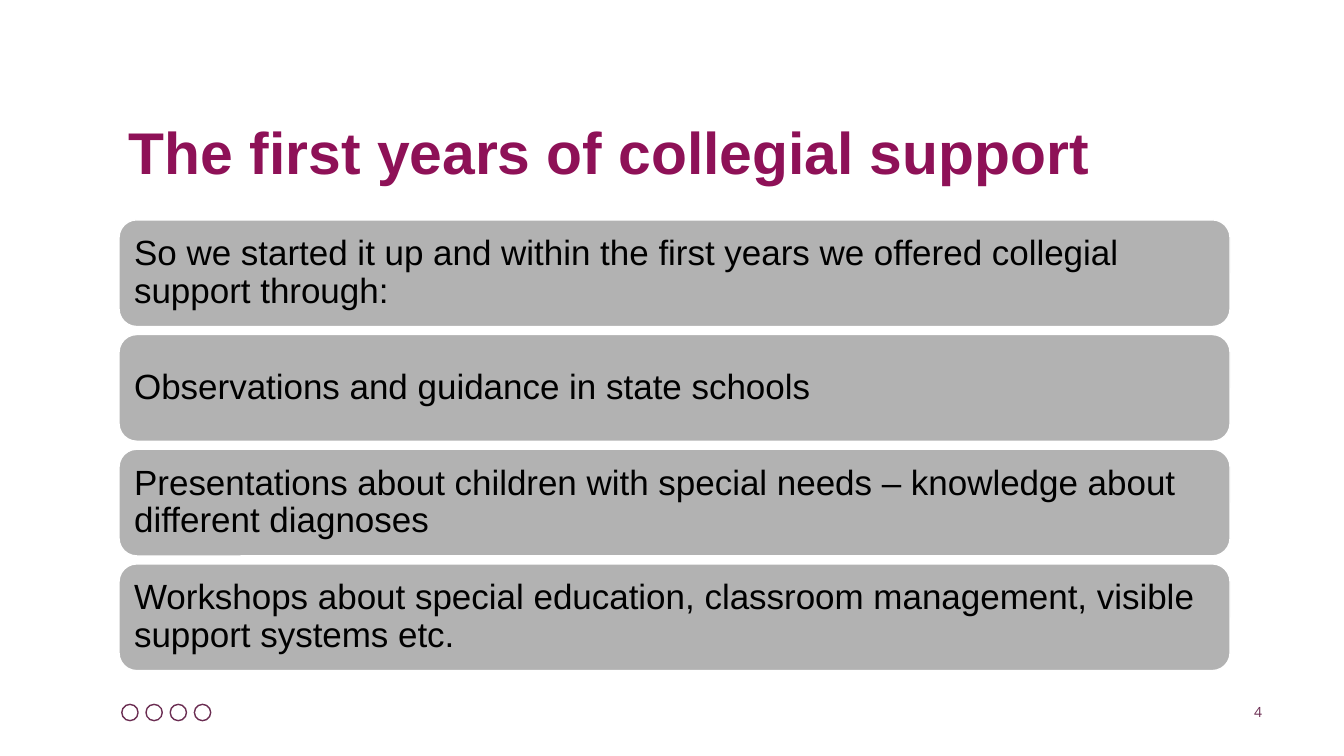
from dataclasses import dataclass

from pptx import Presentation
from pptx.dml.color import RGBColor
from pptx.enum.shapes import MSO_SHAPE as Shape
from pptx.enum.text import MSO_ANCHOR as Anchor, MSO_AUTO_SIZE as AutoSize, PP_ALIGN as Align
from pptx.util import Cm, Pt

COLORS = {
    "title": "8E1157",
    "accent": "6B2D52",
    "card": "B2B2B2",
    "text": "000000",
    "white": "FFFFFF",
}
LEFT, WIDTH = 3.0, 28.0
CARD_TOP, CARD_HEIGHT, CARD_PITCH = 5.54, 2.69, 2.89
DOT_LEFT, DOT_TOP, DOT_SIZE, DOT_PITCH, DOT_COUNT = 3.07, 17.75, 0.41, 0.61, 4

CARD_TEXTS = [
    "So we started it up and within the first years we offered collegial support through:",
    "Observations and guidance in state schools",
    "Presentations about children with special needs – knowledge about different diagnoses",
    "Workshops about special education, classroom management, visible support systems etc.",
]


@dataclass
class TextStyle:
    size: float
    color: str
    font: str = "Arial"
    bold: bool = False
    align: Align = Align.LEFT
    anchor: Anchor = Anchor.MIDDLE
    spacing: float = 0.9
    inset_y: float = 0.13


TITLE = TextStyle(42, "title", bold=True)
CARD = TextStyle(25, "text", inset_y=0.25)
NUMBER = TextStyle(10, "accent", "Open Sans", align=Align.RIGHT, anchor=Anchor.BOTTOM, spacing=1.0)


def rgb(name: str) -> RGBColor:
    return RGBColor.from_string(COLORS[name])


def place(sp, left: float, top: float, width: float, height: float) -> None:
    sp.left, sp.top, sp.width, sp.height = Cm(left), Cm(top), Cm(width), Cm(height)


def write(sp, text: str, style: TextStyle) -> None:
    tf = sp.text_frame
    tf.word_wrap = True
    tf.auto_size = AutoSize.NONE
    tf.vertical_anchor = style.anchor
    tf.margin_left = tf.margin_right = Cm(0.25)
    tf.margin_top = tf.margin_bottom = Cm(style.inset_y)
    p = tf.paragraphs[0]
    p.alignment = style.align
    p.line_spacing = style.spacing
    r = p.add_run()
    r.text = text
    r.font.name = style.font
    r.font.size = Pt(style.size)
    r.font.bold = style.bold
    r.font.color.rgb = rgb(style.color)


def add_outlined(slide, kind: Shape, left: float, top: float,
                 width: float, height: float, line: str):
    sp = slide.shapes.add_shape(kind, Cm(left), Cm(top), Cm(width), Cm(height))
    sp.shadow.inherit = False
    sp.line.color.rgb = rgb(line)
    sp.line.width = Pt(1)
    return sp


def add_card(slide, top: float, text: str) -> None:
    sp = add_outlined(slide, Shape.ROUNDED_RECTANGLE, LEFT, top, WIDTH, CARD_HEIGHT, "white")
    sp.fill.solid()
    sp.fill.fore_color.rgb = rgb("card")
    write(sp, text, CARD)


def add_dot(slide, left: float) -> None:
    sp = add_outlined(slide, Shape.OVAL, left, DOT_TOP, DOT_SIZE, DOT_SIZE, "accent")
    sp.fill.background()


def main() -> None:
    prs = Presentation()
    prs.slide_width, prs.slide_height = Cm(33.87), Cm(19.05)
    slide = prs.slides.add_slide(prs.slide_layouts[5])

    title = slide.shapes.title
    place(title, LEFT, 2.92, WIDTH, 1.98)
    write(title, "The first years of collegial support", TITLE)

    for i in range(DOT_COUNT):
        add_dot(slide, DOT_LEFT + i * DOT_PITCH)

    number = slide.shapes.add_textbox(Cm(29.82), Cm(17.25), Cm(2.24), Cm(1.02))
    write(number, "4", NUMBER)

    for i, text in enumerate(CARD_TEXTS):
        add_card(slide, CARD_TOP + i * CARD_PITCH, text)

    prs.save("out.pptx")


if __name__ == "__main__":
    main()
